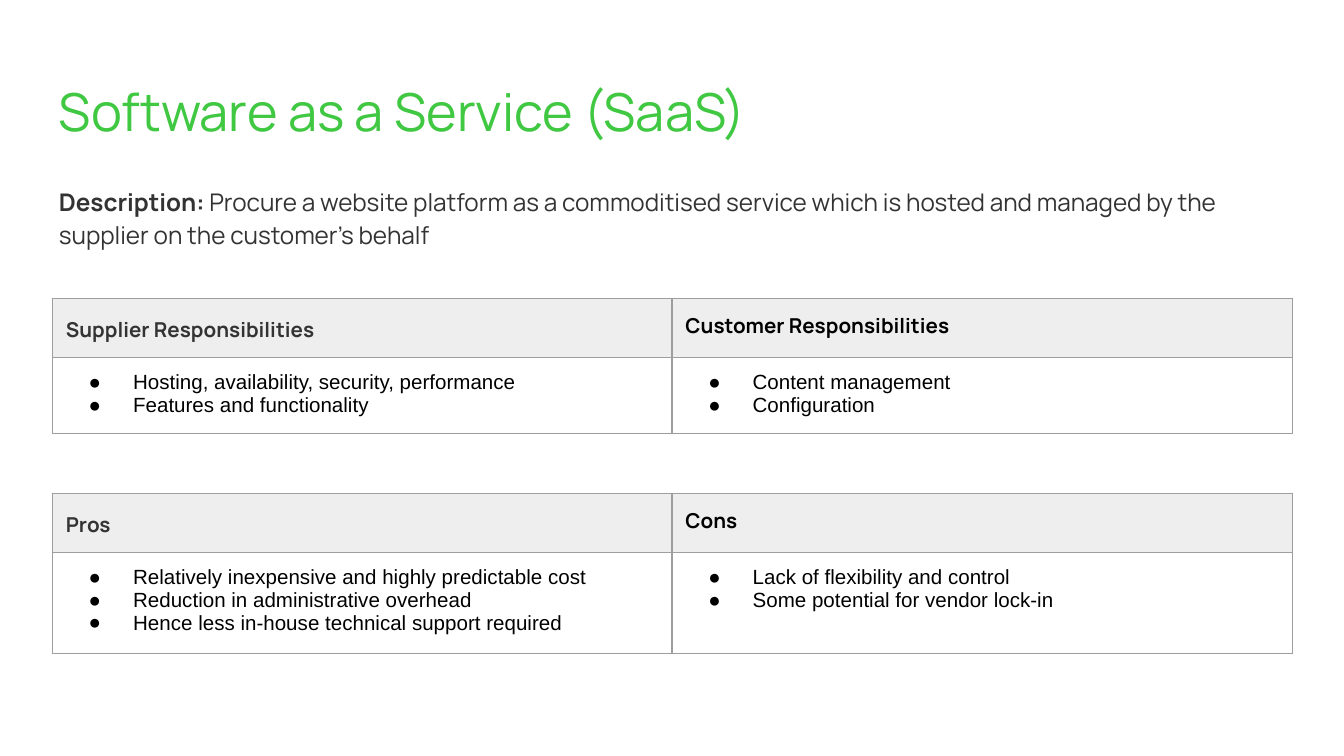
import pptx
import pptx.util
import pptx.dml.color
import pptx.oxml
import pptx.oxml.ns
from lxml import etree

WIDE = 10
HIGH = WIDE * 9 / 16
LEFT, SPAN = 0.34, 9.32
COLS = (4.61, 4.62)
HEAD, LINE, PAD = 0.44, 0.16, 0.1
GREEN, DARK, BLACK, GREY, EDGE = "40C842", "333333", "000000", "EEEEEE", "9E9E9E"

TITLE = "Software as a Service (SaaS)"
ABOUT = [
    ("Description: ", True),
    ("Procure a website platform as a commoditised service which is hosted "
     "and managed by the supplier on the customer’s behalf", False),
]
# Each table: top, then (heading, bullet points) for each column
TABLES = [
    (3.67, [
        ("Pros",
         ["Relatively inexpensive and highly predictable cost",
          "Reduction in administrative overhead",
          "Hence less in-house technical support required"]),
        ("Cons",
         ["Lack of flexibility and control",
          "Some potential for vendor lock-in"]),
    ]),
    (2.22, [
        ("Supplier Responsibilities",
         ["Hosting, availability, security, performance",
          "Features and functionality"]),
        ("Customer Responsibilities",
         ["Content management", "Configuration"]),
    ]),
]

inch = pptx.util.Inches
qn = pptx.oxml.ns.qn


def color(code):
    return pptx.dml.color.RGBColor.from_string(code)


def write(para, text, size=11, font="Manrope", ink=BLACK, bold=False, space=None):
    run = para.add_run()
    run.text = text
    run.font.size = pptx.util.Pt(size)
    run.font.name = font
    run.font.bold = bold
    run.font.color.rgb = color(ink)
    if space:
        para.line_spacing = space


def bullet(para):
    props = para._p.get_or_add_pPr()
    props.set("marL", str(inch(0.5)))
    props.set("indent", str(inch(-0.33)))
    tint = etree.SubElement(props, qn("a:buClr"))
    etree.SubElement(tint, qn("a:srgbClr"), val=BLACK)
    etree.SubElement(props, qn("a:buFont"), typeface="Arial")
    etree.SubElement(props, qn("a:buChar"), char="●")


def border(cell):
    props = cell._tc.get_or_add_tcPr()
    for spot, side in enumerate(("lnL", "lnR", "lnT", "lnB")):
        line = etree.Element(qn("a:" + side), w=str(pptx.util.Pt(0.75)))
        fill = etree.SubElement(line, qn("a:solidFill"))
        etree.SubElement(fill, qn("a:srgbClr"), val=EDGE)
        props.insert(spot, line)


def style(cell, fill=None):
    cell.margin_left = cell.margin_right = inch(PAD)
    cell.margin_top = cell.margin_bottom = inch(PAD)
    if fill:
        cell.fill.solid()
        cell.fill.fore_color.rgb = color(fill)
    else:
        cell.fill.background()
    border(cell)


def box(top, high):
    frame = slide.shapes.add_textbox(
        inch(LEFT), inch(top), inch(SPAN), inch(high)).text_frame
    frame.word_wrap = True
    frame.margin_left = frame.margin_right = inch(PAD)
    frame.margin_top = frame.margin_bottom = inch(PAD)
    return frame.paragraphs[0]


def table(top, parts):
    deep = 2 * PAD + LINE * max(len(points) for _, points in parts)
    grid = slide.shapes.add_table(
        2, len(parts), inch(0.39), inch(top), inch(sum(COLS)), inch(HEAD + deep)).table
    grid.rows[0].height, grid.rows[1].height = inch(HEAD), inch(deep)
    for col, (name, points) in enumerate(parts):
        grid.columns[col].width = inch(COLS[col])
        head, body = grid.cell(0, col), grid.cell(1, col)
        style(head, GREY)
        style(body)
        first = col == 0
        write(head.text_frame.paragraphs[0], name, bold=True,
              ink=DARK if first else BLACK, space=1.15 if first else None)
        for row, point in enumerate(points):
            frame = body.text_frame
            para = frame.add_paragraph() if row else frame.paragraphs[0]
            bullet(para)
            write(para, point, font="Arial")


deck = pptx.Presentation()
deck.slide_width, deck.slide_height = inch(WIDE), inch(HIGH)
slide = deck.slides.add_slide(deck.slide_layouts[6])

# Title and description
write(box(0.49, 0.63), TITLE, size=28, ink=GREEN)
about = box(1.26, 3.74)
for text, bold in ABOUT:
    write(about, text, size=13, ink=DARK, bold=bold, space=1.15)

# Tables
for top, parts in TABLES:
    table(top, parts)

deck.save("out.pptx")
